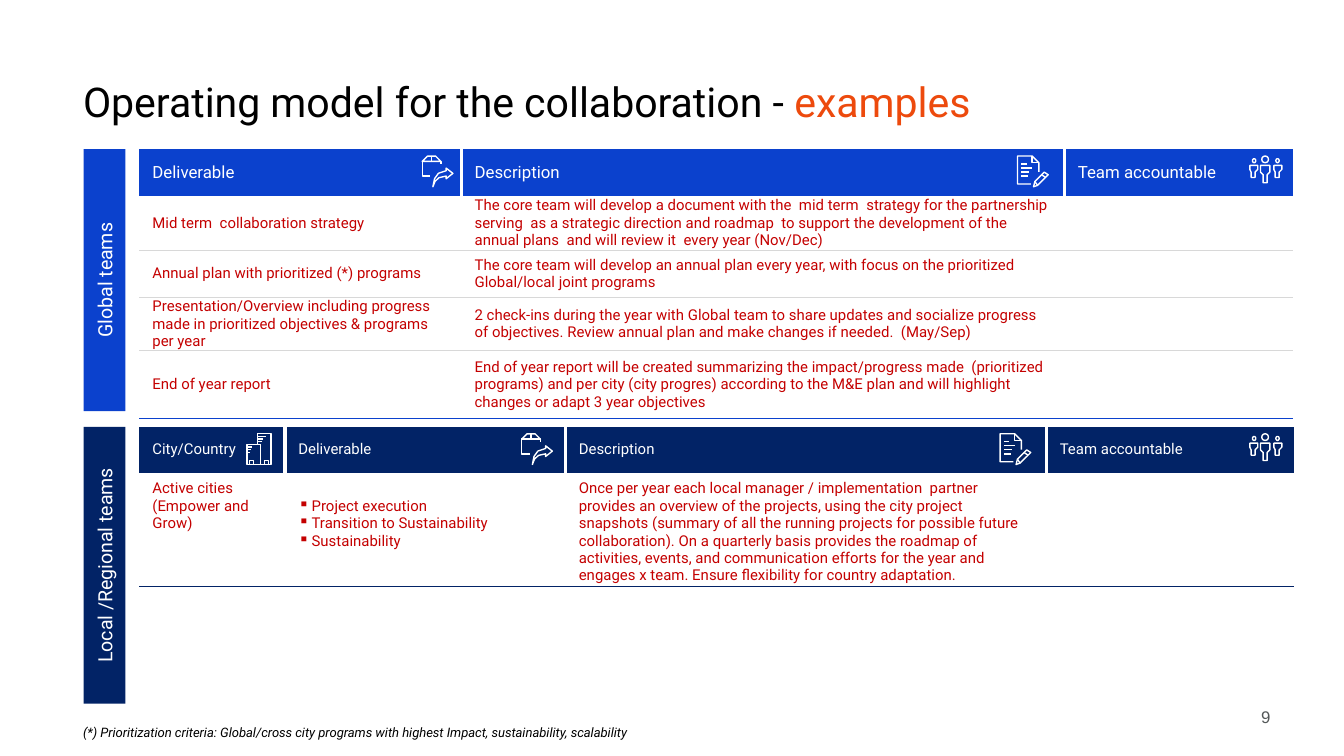
from lxml import etree
from pptx import Presentation
from pptx import util as u
from pptx.dml.color import RGBColor
from pptx.enum import shapes, text
from pptx.oxml.ns import qn

BLUE = RGBColor(0x0B, 0x41, 0xCD)
NAVY = RGBColor(0x02, 0x23, 0x66)
RED = RGBColor(0xC4, 0x00, 0x00)
ORANGE = RGBColor(0xED, 0x4A, 0x0D)
GREY = RGBColor(0xD8, 0xD8, 0xD8)
SLATE = RGBColor(0x54, 0x58, 0x59)
BLACK = RGBColor(0, 0, 0)
WHITE = RGBColor(0xFF, 0xFF, 0xFF)
INSET = 0.25
ICON_SIZE = 0.58
ICON_GRID = 23  # grid units across one icon

# Icons on the grid: outlines (two points make a line), rectangles and ovals
PARCEL = {"outlines": [
    [(6, 15), (0, 15), (0, 4), (14, 4), (14, 6)],
    [(14, 4), (0, 4), (4, 0), (10, 0), (14, 4)],
    [(7, 0), (7, 4)],
    [(18, 17), (18, 15), (12.6, 16.2), (9.6, 19), (8, 23), (9.25, 17),
     (12.2, 12.9), (18, 11), (18, 9), (23, 13), (18, 17)]]}
DOCUMENT = {"outlines": [
    *[[(3, y), (end, y)] for y, end in ((6, 7), (9, 11), (12, 9), (15, 8))],
    [(15, 22), (12, 23), (13, 19), (20, 12), (23, 14), (15, 22)],
    [(18, 14), (21, 16)], [(13, 19), (15, 22)],
    [(10, 21), (0, 21), (0, 0), (11, 0), (16, 5), (16, 12)],
    [(11, 0), (11, 5), (16, 5)]]}
SIDE_BODY = [(0, 7), (0, 10), (1, 12), (1, 16), (4, 16), (4, 12), (6, 10), (6, 7), (0, 7)]
PEOPLE = {"outlines": [
    SIDE_BODY, [(x + 18, y) for x, y in SIDE_BODY],
    [(8, 7), (15, 7), (15, 12), (13, 14), (13, 20), (10, 20), (10, 14), (8, 12), (8, 7)]],
    "ovals": [(2, 2, 2.5, 3), (19.5, 2, 2.5, 3), (9, 0, 5, 5)]}
BUILDINGS = {"outlines": [
    [(18, 23), (10, 23), (10, 8), (8, 8), (8, 0), (18, 0), (18, 23)],
    *[[(0, y), (end, y)] for y, end in ((10, 4), (12, 3), (14, 2))],
    *[[(8, y), (end, y)] for y, end in ((2, 14), (4, 12), (6, 11))]],
    "rectangles": [(0, 8, 10, 15), (13, 20, 3, 3), (2, 20, 3, 3)]}


def add_run(paragraph, words, size, color, font="Roboto", italic=False):
    run = paragraph.add_run()
    run.text = words
    run.font.name = font
    run.font.size = u.Pt(size)
    run.font.italic = italic
    run.font.color.rgb = color


def set_margins(target, left, top, right, bottom):
    target.margin_left, target.margin_top = u.Cm(left), u.Cm(top)
    target.margin_right, target.margin_bottom = u.Cm(right), u.Cm(bottom)


def add_bullet(paragraph, color):
    properties = paragraph._p.get_or_add_pPr()
    properties.set("marL", str(u.Cm(INSET)))
    properties.set("indent", str(-u.Cm(INSET)))
    bullet_color = etree.SubElement(properties, qn("a:buClr"))
    etree.SubElement(bullet_color, qn("a:srgbClr"), val=str(color))
    etree.SubElement(properties, qn("a:buChar"), char="▪")


def set_borders(cell, **borders):
    """Each border is a (color, points) pair; sides left out get no line."""
    properties = cell._tc.get_or_add_tcPr()
    for index, side in enumerate("LRTB"):
        line = etree.Element(qn("a:ln" + side))
        if side in borders:
            color, points = borders[side]
            line.set("w", str(u.Pt(points)))
            fill = etree.SubElement(line, qn("a:solidFill"))
            etree.SubElement(fill, qn("a:srgbClr"), val=str(color))
        else:
            etree.SubElement(line, qn("a:noFill"))
        properties.insert(index, line)


def add_icon(slide, left, top, icon):
    group = slide.shapes.add_group_shape()
    unit = u.Cm(ICON_SIZE) / ICON_GRID
    x0, y0 = u.Cm(left), u.Cm(top)
    parts = []
    kinds = {"rectangles": shapes.MSO_SHAPE.RECTANGLE, "ovals": shapes.MSO_SHAPE.OVAL}
    for name, kind in kinds.items():
        for x, y, width, height in icon.get(name, []):
            parts.append(group.shapes.add_shape(
                kind, int(x0 + x * unit), int(y0 + y * unit),
                int(width * unit), int(height * unit)))
    for outline in icon["outlines"]:
        points = [(int(x0 + x * unit), int(y0 + y * unit)) for x, y in outline]
        if len(points) == 2:
            connector = group.shapes.add_connector(
                shapes.MSO_CONNECTOR.STRAIGHT, *points[0], *points[1])
            connector.line.color.rgb = WHITE
            connector.line.width = u.Pt(0.75)
            etree.SubElement(connector._element.spPr, qn("a:effectLst"))
        else:
            builder = group.shapes.build_freeform(*points[0])
            builder.add_line_segments(points[1:], close=points[0] == points[-1])
            parts.append(builder.convert_to_shape())
    for shape in parts:
        shape.fill.background()
        shape.line.color.rgb = WHITE
        shape.line.width = u.Pt(0.75)
        shape.shadow.inherit = False


def add_title(slide, left, top, width, height):
    title = slide.shapes.title
    title.left, title.top = u.Cm(left), u.Cm(top)
    title.width, title.height = u.Cm(width), u.Cm(height)
    frame = title.text_frame
    frame.word_wrap = True
    frame.vertical_anchor = text.MSO_ANCHOR.TOP
    set_margins(frame, 0, INSET, INSET, INSET)
    paragraph = frame.paragraphs[0]
    paragraph.alignment = text.PP_ALIGN.LEFT
    add_run(paragraph, "Operating model for the collaboration - ", 22, BLACK)
    add_run(paragraph, "examples", 22, ORANGE)


def add_side_bar(slide, left, top, width, height, words, color):
    # The bar is laid flat around the same centre, then turned upright
    shift = (height - width) / 2
    bar = slide.shapes.add_shape(shapes.MSO_SHAPE.RECTANGLE, u.Cm(left - shift),
                                 u.Cm(top + shift), u.Cm(height), u.Cm(width))
    bar.rotation = 270
    bar.shadow.inherit = False
    bar.fill.solid()
    bar.fill.fore_color.rgb = color
    bar.line.fill.background()
    frame = bar.text_frame
    frame.vertical_anchor = text.MSO_ANCHOR.MIDDLE
    set_margins(frame, INSET, INSET, INSET, INSET)
    frame.paragraphs[0].alignment = text.PP_ALIGN.CENTER
    add_run(frame.paragraphs[0], words, 10.5, WHITE)


def add_team_table(slide, left, top, columns, heights, rows, color, header_size, anchor, icons):
    table = slide.shapes.add_table(len(rows), len(columns), u.Cm(left), u.Cm(top),
                                   u.Cm(sum(columns)), u.Cm(sum(heights))).table
    table.first_row = table.horz_banding = False
    for column, width in zip(table.columns, columns):
        column.width = u.Cm(width)
    last = len(rows) - 1
    for r, (height, row) in enumerate(zip(heights, rows)):
        table.rows[r].height = u.Cm(height)
        for c, content in enumerate(row):
            cell = table.cell(r, c)
            if r == 0:  # header
                cell.fill.solid()
                cell.fill.fore_color.rgb = color
                set_margins(cell, INSET, INSET, INSET, INSET)
                add_run(cell.text_frame.paragraphs[0], content, header_size, WHITE)
                gap = (WHITE, 2.25)
                sides = {"L": gap} if c else {}
                if c < len(columns) - 1:
                    sides["R"] = gap
                set_borders(cell, **sides)
                continue
            cell.fill.background()
            cell.vertical_anchor = anchor
            bulleted = isinstance(content, list)
            middle = anchor == text.MSO_ANCHOR.MIDDLE
            set_margins(cell, INSET, 0 if middle else 0.46 if bulleted else 0.13, INSET, 0)
            for i, words in enumerate(content if bulleted else [content]):
                frame = cell.text_frame
                paragraph = frame.add_paragraph() if i else frame.paragraphs[0]
                if bulleted:
                    add_bullet(paragraph, RED)
                if words:
                    add_run(paragraph, words, 8, RED)
            sides = {"B": (color if r == last else GREY, 0.75)}
            if r > 1:
                sides["T"] = (GREY, 0.75)
            set_borders(cell, **sides)
    for offset, icon in icons:
        add_icon(slide, left + offset, top + 0.13, icon)


def add_note(slide, left, top, width, height, words, size, color, font, italic, alignment, margins):
    frame = slide.shapes.add_textbox(u.Cm(left), u.Cm(top), u.Cm(width), u.Cm(height)).text_frame
    frame.word_wrap = True
    set_margins(frame, *margins)
    frame.paragraphs[0].alignment = alignment
    add_run(frame.paragraphs[0], words, size, color, font, italic)


def main():
    presentation = Presentation()
    presentation.slide_width, presentation.slide_height = u.Cm(25.4), u.Cm(14.29)
    slide = presentation.slides.add_slide(presentation.slide_layouts[5])
    add_title(slide, 1.57, 1.19, 20.65, 1.6)

    # Global teams
    add_side_bar(slide, 1.58, 2.82, 0.79, 4.95, "Global teams", BLUE)
    add_team_table(slide, 2.63, 2.82, [6.09, 11.4, 4.32], [0.88, 1.03, 0.89, 1.01, 1.28], [
        ["Deliverable", "Description", "Team accountable"],
        ["Mid term  collaboration strategy",
         "The core team will develop a document with the  mid term  strategy for the partnership serving  as a strategic direction and roadmap  to support the development of the annual plans  and will review it  every year (Nov/Dec)", ""],
        ["Annual plan with prioritized (*) programs",
         "The core team will develop an annual plan every year, with focus on the prioritized  Global/local joint programs", ""],
        ["Presentation/Overview including progress made in prioritized objectives & programs per year",
         "2 check-ins during the year with Global team to share updates and socialize progress of objectives. Review annual plan and make changes if needed.  (May/Sep)", ""],
        ["End of year report",
         "End of year report will be created summarizing the impact/progress made  (prioritized programs) and per city (city progres) according to the M&E plan and will highlight changes or adapt 3 year objectives", ""],
    ], BLUE, 9, text.MSO_ANCHOR.MIDDLE, [(5.35, PARCEL), (16.6, DOCUMENT), (20.99, PEOPLE)])

    # Local and regional teams
    add_side_bar(slide, 1.58, 8.07, 0.79, 5.23, "Local /Regional teams", NAVY)
    add_team_table(slide, 2.63, 8.07, [2.76, 5.3, 9.09, 4.68], [0.87, 2.14], [
        ["City/Country", "Deliverable", "Description", "Team accountable"],
        ["Active cities (Empower and Grow)",
         ["Project execution", "Transition to Sustainability", "Sustainability"],
         "Once per year each local manager / implementation  partner provides an overview of the projects, using the city project snapshots (summary of all the running projects for possible future collaboration). On a quarterly basis provides the roadmap of activities, events, and communication efforts for the year and engages x team. Ensure flexibility for country adaptation.", ""],
    ], NAVY, 8, text.MSO_ANCHOR.TOP,
        [(2.04, BUILDINGS), (7.23, PARCEL), (16.27, DOCUMENT), (20.99, PEOPLE)])

    # Footnote and page number
    add_note(slide, 1.57, 13.69, 10.29, 0.58,
             "(*) Prioritization criteria: Global/cross city programs with highest Impact, sustainability, scalability",
             7, BLACK, "Roboto", True, text.PP_ALIGN.LEFT, (0, 0, 0, 0))
    add_note(slide, 22.91, 13.23, 1.35, 0.46, "9", 9, SLATE, "Arial", False,
             text.PP_ALIGN.RIGHT, (INSET, 0.13, INSET, 0.13))
    presentation.save("out.pptx")


if __name__ == "__main__":
    main()
